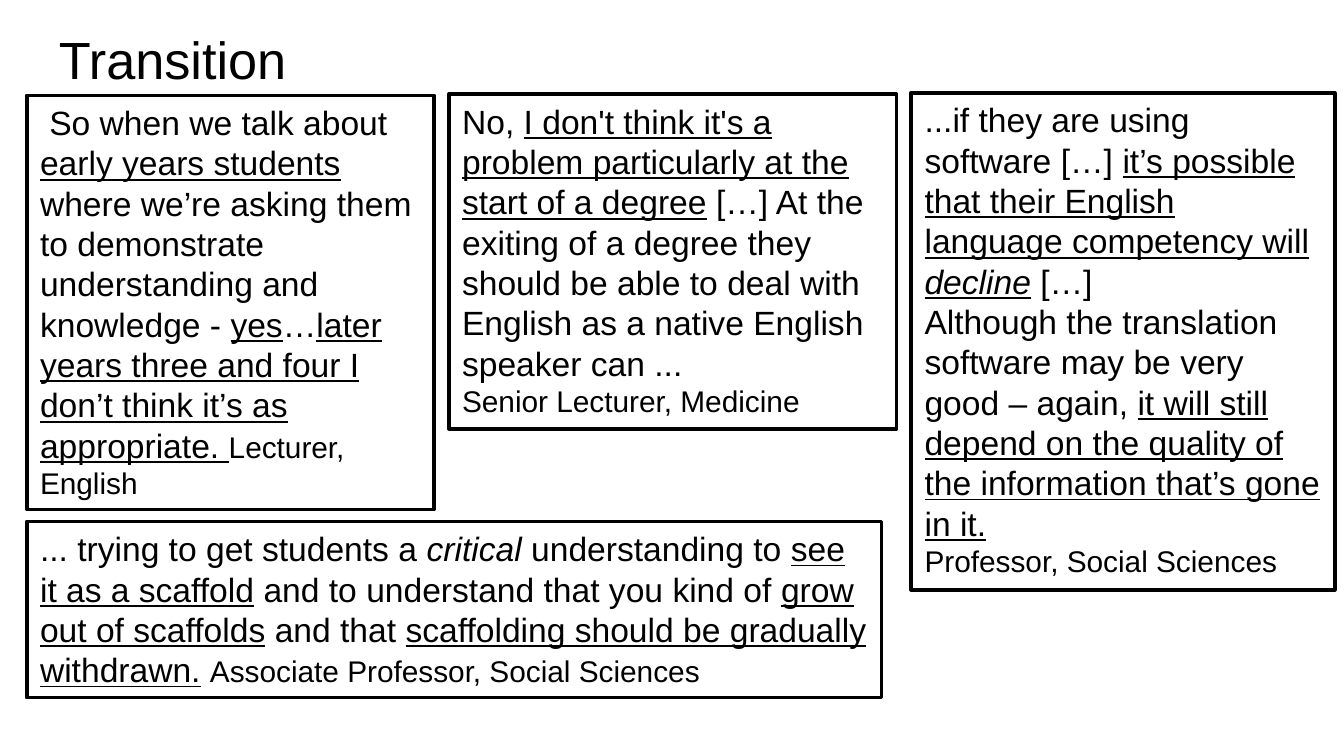
from pptx import Presentation
from pptx.dml.color import RGBColor
from pptx.enum.shapes import MSO_SHAPE
from pptx.enum.text import MSO_ANCHOR, MSO_AUTO_SIZE, PP_ALIGN
from pptx.util import Pt

RECTANGLE = MSO_SHAPE.RECTANGLE
TOP = MSO_ANCHOR.TOP
GROW = MSO_AUTO_SIZE.SHAPE_TO_FIT_TEXT
LEFT = PP_ALIGN.LEFT

COLOURS = {"ink": "000000", "paper": "FFFFFF"}
TITLE_SIZE, QUOTE_SIZE, SPEAKER_SIZE = 28, 18, 16

# Each quote: (left, top, width, height) and paragraphs of (text, marks).
# Marks: u = underlined, i = italic, s = speaker size.
QUOTES = [
    ((14.4, 279.4, 457.9, 94.3), [
        [("... trying to get students a ", ""), ("critical", "i"),
         (" understanding to ", ""), ("see it as a scaffold", "u"),
         (" and to understand that you kind of ", ""),
         ("grow out of scaffolds", "u"), (" and that ", ""),
         ("scaffolding should be gradually withdrawn.", "u"), (" ", ""),
         ("Associate Professor, Social Sciences", "s")],
    ]),
    ((14.4, 51.1, 218.2, 221.8), [
        [(" So when we talk about ", ""), ("early years students", "u"),
         (" where we’re asking them to demonstrate understanding and knowledge - ", ""),
         ("yes", "u"), ("…", ""),
         ("later years three and four I don’t think it’s as appropriate. ", "u"),
         ("Lecturer, English", "s")],
    ]),
    ((240.5, 50.4, 239.8, 179.3), [
        [("No, ", ""),
         ("I don't think it's a problem particularly at the start of a degree", "u"),
         (" […] At the exiting of a degree they should be able to deal with "
          "English as a native English speaker can ...", "")],
        [("Senior Lecturer, Medicine", "s")],
    ]),
    ((488.2, 49.7, 226.8, 266.4), [
        [("...if they are using software […] ", ""),
         ("it’s possible that their English language competency will ", "u"),
         ("decline", "ui"), (" […]", "")],
        [("Although the translation software may be very good – again, ", ""),
         ("it will still depend on the quality of the information that’s gone in it.", "u")],
        [("Professor, Social Sciences", "s")],
    ]),
]


class SlideBuilder:
    def __init__(self, slide, font_name="Arial"):
        self.slide = slide
        self.font_name = font_name

    def colour(self, key):
        return RGBColor.from_string(COLOURS[key])

    def style_paragraph(self, paragraph, size):
        paragraph.alignment = LEFT
        paragraph.font.name = self.font_name
        paragraph.font.size = Pt(size)
        paragraph.font.color.rgb = self.colour("ink")

    def title(self, wording, box):
        heading = self.slide.shapes.add_textbox(*map(Pt, box))
        frame = heading.text_frame
        frame.word_wrap = True
        frame.margin_top = frame.margin_bottom = Pt(7.2)
        frame.text = wording
        self.style_paragraph(frame.paragraphs[0], TITLE_SIZE)

    def quote(self, box, paragraphs):
        panel = self.slide.shapes.add_shape(RECTANGLE, *map(Pt, box))
        panel.shadow.inherit = False
        panel.fill.solid()
        panel.fill.fore_color.rgb = self.colour("paper")
        panel.line.color.rgb = self.colour("ink")
        panel.line.width = Pt(2)
        frame = panel.text_frame
        frame.word_wrap = True
        frame.auto_size = GROW
        frame.vertical_anchor = TOP
        for index, pieces in enumerate(paragraphs):
            paragraph = frame.add_paragraph() if index else frame.paragraphs[0]
            is_speaker = all("s" in marks for _, marks in pieces)
            self.style_paragraph(paragraph, SPEAKER_SIZE if is_speaker else QUOTE_SIZE)
            for wording, marks in pieces:
                self.piece(paragraph, wording, marks)

    def piece(self, paragraph, wording, marks):
        run = paragraph.add_run()
        run.text = wording
        if "u" in marks:
            run.font.underline = True
        if "i" in marks:
            run.font.italic = True
        if "s" in marks:
            run.font.size = Pt(SPEAKER_SIZE)


def main():
    deck = Presentation()
    deck.slide_width, deck.slide_height = Pt(720), Pt(405)
    builder = SlideBuilder(deck.slides.add_slide(deck.slide_layouts[6]))
    builder.title("Transition", (24.5, 7.2, 671, 45.4))
    for box, paragraphs in QUOTES:
        builder.quote(box, paragraphs)
    deck.save("out.pptx")


if __name__ == "__main__":
    main()
